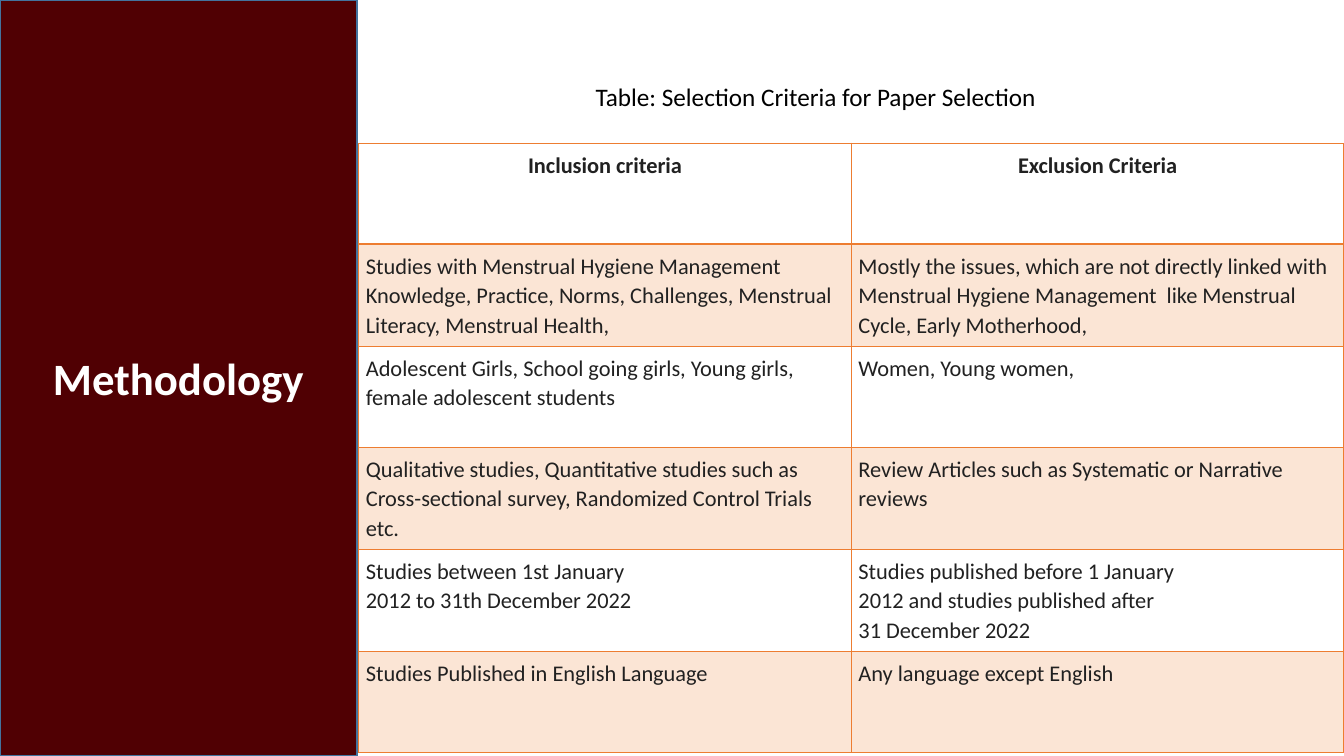
import pptx
import pptx.util
import pptx.dml.color
import pptx.enum.shapes
import pptx.enum.text
import lxml.etree

RGB = pptx.dml.color.RGBColor
ALIGN = pptx.enum.text.PP_ALIGN
ANCHOR = pptx.enum.text.MSO_ANCHOR

MAROON = RGB(0x50, 0x00, 0x03)
BLUE = RGB(0x43, 0x73, 0x9E)
ORANGE = RGB(0xED, 0x7D, 0x31)
INK = RGB(0x21, 0x21, 0x21)
WHITE = RGB(0xFF, 0xFF, 0xFF)
BLACK = RGB(0x00, 0x00, 0x00)

ROWS = [
    ("Inclusion criteria", "Exclusion Criteria"),
    ("Studies with Menstrual Hygiene Management Knowledge, Practice, Norms, "
     "Challenges, Menstrual Literacy, Menstrual Health,",
     "Mostly the issues, which are not directly linked with Menstrual Hygiene "
     "Management  like Menstrual Cycle, Early Motherhood,"),
    ("Adolescent Girls, School going girls, Young girls, female adolescent students",
     "Women, Young women,"),
    ("Qualitative studies, Quantitative studies such as Cross-sectional survey, "
     "Randomized Control Trials etc.",
     "Review Articles such as Systematic or Narrative reviews"),
    ("Studies between 1st January\n2012 to 31th December 2022",
     "Studies published before 1 January\n2012 and studies published after\n"
     "31 December 2022"),
    ("Studies Published in English Language", "Any language except English"),
]


def apply(item, form):
    for key, val in form.items():
        setattr(item, key, val)


class Deck:
    font = "Calibri"
    inset = pptx.util.Inches(0.07)

    def __init__(self):
        self.show = pptx.Presentation()
        self.show.slide_width = pptx.util.Inches(13.33)
        self.show.slide_height = pptx.util.Inches(7.5)
        self.slide = self.show.slides.add_slide(self.show.slide_layouts[6])

    def place(self, left, top, width, height):
        wide, high = self.show.slide_width, self.show.slide_height
        return [int(share * size / 100) for share, size in
                ((left, wide), (top, high), (width, wide), (height, high))]

    def prose(self, frame, text, size, color, bold=False, **form):
        frame.text = text
        for para in frame.paragraphs:
            apply(para, form)
            for run in para.runs:
                apply(run.font, {"name": self.font, "size": pptx.util.Pt(size),
                                 "bold": bold})
                run.font.color.rgb = color

    def panel(self, box, text):
        shape = self.slide.shapes.add_shape(
            pptx.enum.shapes.MSO_SHAPE.FLOWCHART_PROCESS, *self.place(*box))
        shape.shadow.inherit = False
        shape.fill.solid()
        shape.fill.fore_color.rgb = MAROON
        shape.line.color.rgb = BLUE
        shape.line.width = pptx.util.Pt(1)
        shape.text_frame.vertical_anchor = ANCHOR.MIDDLE
        self.prose(shape.text_frame, text, 32, WHITE, True, alignment=ALIGN.CENTER)

    def label(self, box, text):
        frame = self.slide.shapes.add_textbox(*self.place(*box)).text_frame
        apply(frame, {"word_wrap": False,
                      "auto_size": pptx.enum.text.MSO_AUTO_SIZE.SHAPE_TO_FIT_TEXT})
        self.prose(frame, text, 18, BLACK)

    def shade(self, cell):
        cell.fill.solid()
        cell.fill.fore_color.rgb = ORANGE
        tone = next(cell._tc.tcPr.iter(pptx.oxml.ns.qn("a:srgbClr")))
        lxml.etree.SubElement(tone, pptx.oxml.ns.qn("a:alpha"), val="20000")

    def edge(self, cell, widths):
        props = cell._tc.get_or_add_tcPr()
        for spot, (side, width) in enumerate(widths.items()):
            props.insert(spot, pptx.oxml.parse_xml(
                f'<a:ln{side} {pptx.oxml.ns.nsdecls("a")} w="{pptx.util.Pt(width)}">'
                f'<a:solidFill><a:srgbClr val="{ORANGE}"/></a:solidFill></a:ln{side}>'))

    def table(self, box, rows):
        grid = self.slide.shapes.add_table(
            len(rows), len(rows[0]), *self.place(*box)).table
        apply(grid, {"first_row": False, "horz_banding": False})
        for row, texts in enumerate(rows):
            head = row == 0
            for col, text in enumerate(texts):
                cell = grid.cell(row, col)
                apply(cell, {f"margin_{side}": self.inset
                             for side in ("left", "right", "top", "bottom")})
                if row % 2:
                    self.shade(cell)
                else:
                    cell.fill.background()
                self.edge(cell, {"L": 1, "R": 1, "T": 2 if row == 1 else 1,
                                 "B": 2 if head else 1})
                self.prose(cell.text_frame, text, 16, INK, head, line_spacing=1.07,
                           alignment=ALIGN.CENTER if head else ALIGN.LEFT)


def main():
    deck = Deck()
    deck.panel((0, 0, 26.55, 100), "Methodology")
    deck.table((26.7, 18.93, 73.3, 80.27), ROWS)
    deck.label((43.58, 10.13, 34.65, 5.33),
               "Table: Selection Criteria for Paper Selection")
    deck.show.save("out.pptx")


if __name__ == "__main__":
    main()
